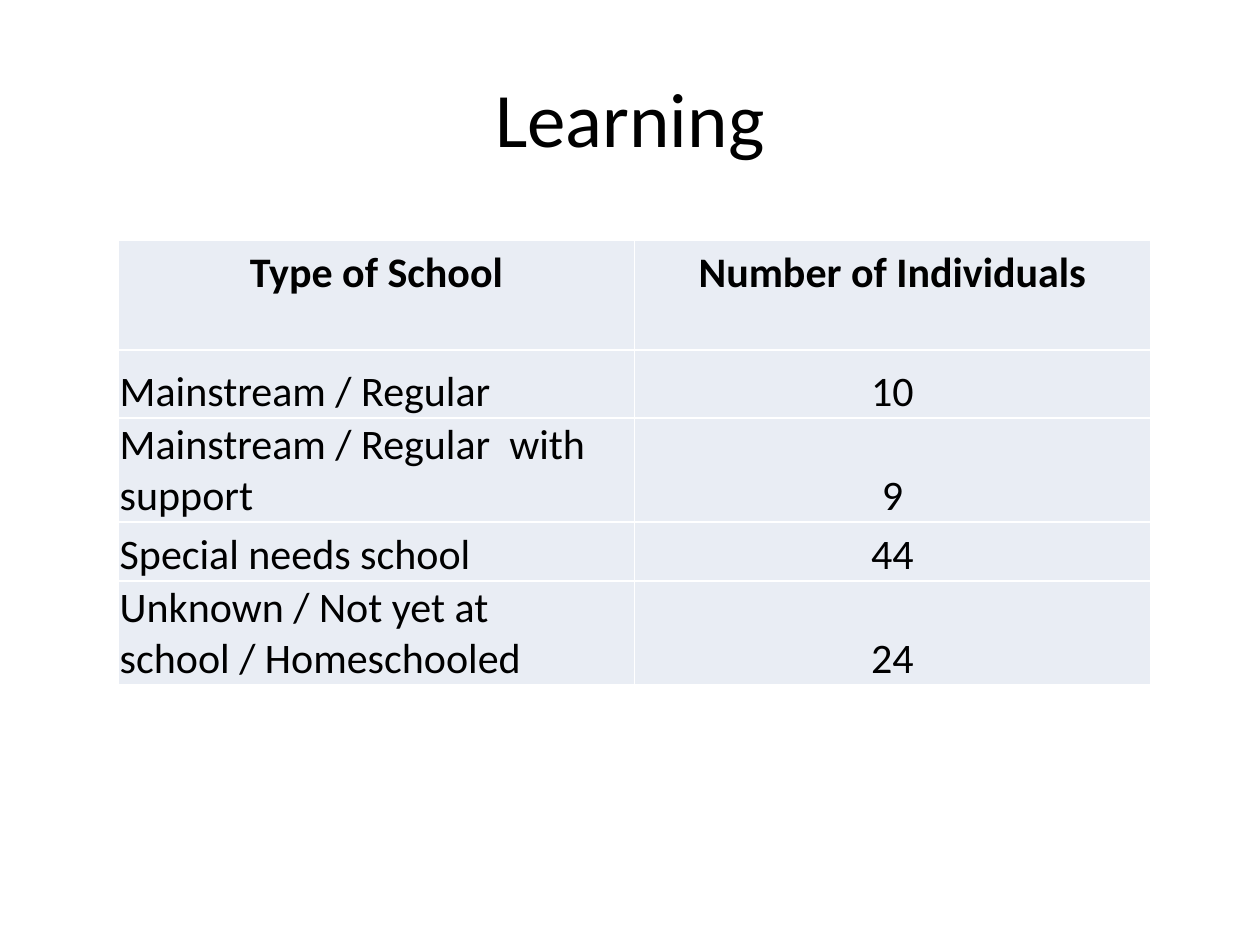
from lxml import etree
from pptx import Presentation
from pptx import util as u
from pptx.dml.color import RGBColor
from pptx.enum import text
from pptx.oxml.ns import qn

theme = {
    "font": "Calibri",
    "ink": "000000",
    "fill": "E9EDF4",
    "rule": "FFFFFF",
    "title": 44,
    "cell": 24,
}


def write(frame, words, size, bold, align):
    par = frame.paragraphs[0]
    par.alignment = align
    run = par.add_run()
    run.text = words
    run.font.name = theme["font"]
    run.font.size = u.Pt(size)
    run.font.bold = bold
    run.font.color.rgb = RGBColor.from_string(theme["ink"])


def border(cell):
    props = cell._tc.get_or_add_tcPr()
    for spot, side in enumerate(("lnL", "lnR", "lnT", "lnB")):
        line = etree.Element(qn("a:" + side), w=str(u.Pt(1)))
        fill = etree.SubElement(line, qn("a:solidFill"))
        etree.SubElement(fill, qn("a:srgbClr"), val=theme["rule"])
        props.insert(spot, line)


deck = Presentation()
deck.slide_width, deck.slide_height = u.Inches(10), u.Inches(7.5)
slide = deck.slides.add_slide(deck.slide_layouts[5])
left, center = text.PP_ALIGN.LEFT, text.PP_ALIGN.CENTER

# Title
title = slide.shapes.title
title.left, title.top = u.Inches(0.5), u.Inches(0.3)
title.width, title.height = u.Inches(9), u.Inches(1.25)
title.text_frame.vertical_anchor = text.MSO_ANCHOR.MIDDLE
write(title.text_frame, "Learning", theme["title"], False, center)

# School table: label, count, row height, right inset of the label
rows = [
    ("Type of School", "Number of Individuals", 0.87, 0.01),
    ("Mainstream / Regular", "10", 0.54, 0.01),
    ("Mainstream / Regular  with support", "9", 0.47, 0.01),
    ("Special needs school", "44", 0.47, 0.01),
    ("Unknown / Not yet at school / Homeschooled", "24", 0.47, 0.3),
]
table = slide.shapes.add_table(
    len(rows), 2, u.Inches(0.94), u.Inches(1.91),
    u.Inches(8.19), u.Inches(sum(row[2] for row in rows))).table
table.horz_banding = False

for r, (label, count, height, inset) in enumerate(rows):
    table.rows[r].height = u.Inches(height)
    head = r == 0
    for c, words in enumerate((label, count)):
        cell = table.cell(r, c)
        cell.fill.solid()
        cell.fill.fore_color.rgb = RGBColor.from_string(theme["fill"])
        border(cell)
        cell.vertical_anchor = text.MSO_ANCHOR.BOTTOM
        cell.margin_left = cell.margin_top = u.Inches(0.01)
        cell.margin_right = u.Inches(inset if c == 0 else 0.01)
        # The heading sits one line above the row's lower edge
        cell.margin_bottom = u.Inches(0.41 if head else 0)
        write(cell.text_frame, words, theme["cell"], head,
              center if head or c else left)

deck.save("out.pptx")
